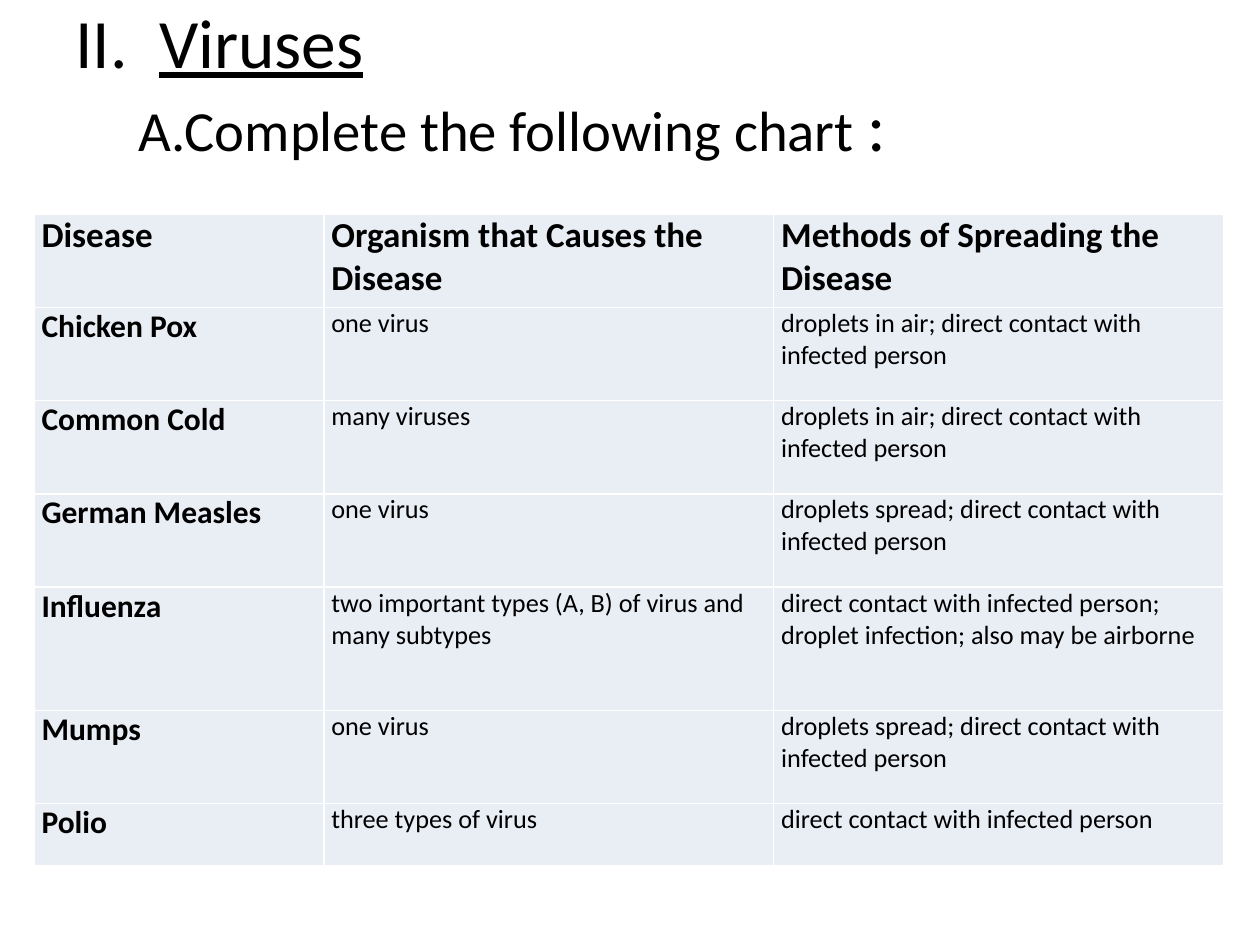
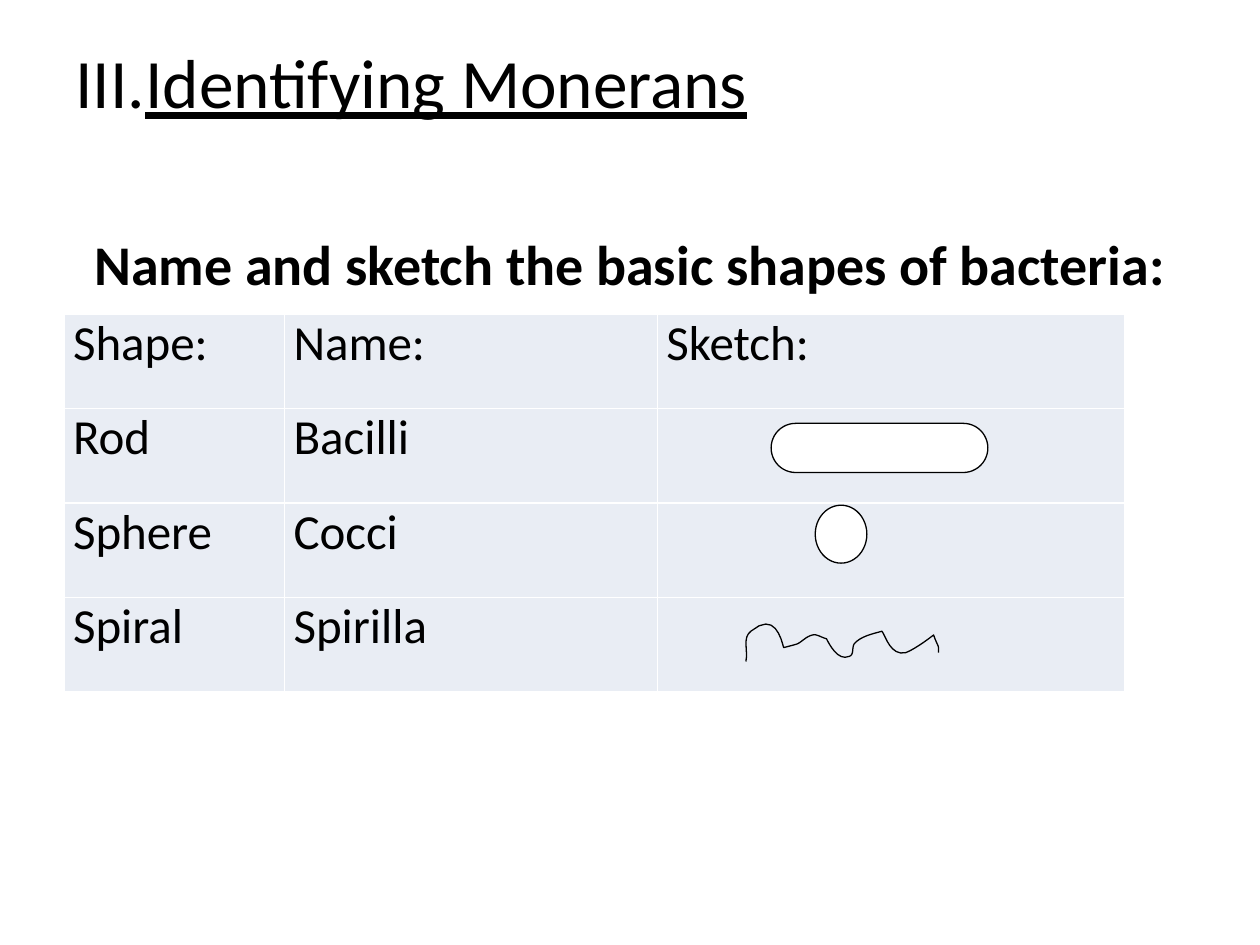
"""Build two worksheet slides on viral diseases and the shapes of bacteria."""
from pptx import Presentation
from pptx.dml.color import RGBColor
from pptx.enum.shapes import MSO_SHAPE
from pptx.enum.text import MSO_ANCHOR
from pptx.util import Inches, Pt

BOTTOM, TOP = MSO_ANCHOR.BOTTOM, MSO_ANCHOR.TOP
PILL, OVAL = MSO_SHAPE.ROUNDED_RECTANGLE, MSO_SHAPE.OVAL
FONT = "Calibri"
BLACK, WHITE, CELL_FILL = "000000", "FFFFFF", "E9EDF4"
TITLE_AREA = (0.5, 0.3, 9, 1.25)
TITLE_SIZE, SUBTITLE_SIZE = 39.6, 32.4
color = RGBColor.from_string


def add_text(page, area, anchor, margins, lines, bold=False):
    box = page.shapes.add_textbox(*map(Inches, area))
    frame = box.text_frame
    frame.word_wrap = True
    frame.vertical_anchor = anchor
    frame.margin_left, frame.margin_top, frame.margin_bottom = map(Inches, margins)
    for index, line in enumerate(lines):
        para = frame.add_paragraph() if index else frame.paragraphs[0]
        para.font.name = FONT
        para.font.bold = bold
        para.font.color.rgb = color(BLACK)
        for text, size, underline in line:
            span = para.add_run()
            span.text = text
            span.font.size = Pt(size)
            span.font.underline = underline


def add_grid(page, left, top, widths, heights, rows, margin, style_of):
    table = page.shapes.add_table(
        len(rows), len(widths), Inches(left), Inches(top),
        Inches(sum(widths)), Inches(sum(heights))).table
    table.first_row = table.horz_banding = False
    for column, width in zip(table.columns, widths):
        column.width = Inches(width)
    for row_index, (row, height) in enumerate(zip(rows, heights)):
        table.rows[row_index].height = Inches(height)
        for column_index, text in enumerate(row):
            cell = table.cell(row_index, column_index)
            cell.fill.solid()
            cell.fill.fore_color.rgb = color(CELL_FILL)
            cell.margin_left = cell.margin_right = Inches(margin)
            cell.margin_top = cell.margin_bottom = 0
            para = cell.text_frame.paragraphs[0]
            para.text = text
            size, bold = style_of(row_index, column_index)
            para.font.name = FONT
            para.font.size = Pt(size)
            para.font.bold = bold
            para.font.color.rgb = color(BLACK)


deck = Presentation()
deck.slide_width, deck.slide_height = Inches(10), Inches(7.5)
blank = deck.slide_layouts[6]

page = deck.slides.add_slide(blank)
add_text(page, TITLE_AREA, BOTTOM, (0.1, 0.05, 0.24), [
    [("II.  ", TITLE_SIZE, False), ("Viruses", TITLE_SIZE, True)],
    [("\tA.Complete the following chart ", SUBTITLE_SIZE, False), (":", TITLE_SIZE, False)],
])
diseases = [
    ("Disease", "Organism that Causes the Disease", "Methods of Spreading the Disease"),
    ("Chicken Pox", "one virus", "droplets in air; direct contact with infected person"),
    ("Common Cold", "many viruses", "droplets in air; direct contact with infected person"),
    ("German Measles", "one virus", "droplets spread; direct contact with infected person"),
    ("Influenza", "two important types (A, B) of virus and many subtypes",
     "direct contact with infected person; droplet infection; also may be airborne"),
    ("Mumps", "one virus", "droplets spread; direct contact with infected person"),
    ("Polio", "three types of virus", "direct contact with infected person"),
]
add_grid(page, 0.27, 1.7, [2.3, 3.57, 3.57], [0.74] * 4 + [0.98, 0.74, 0.49], diseases, 0.06,
         lambda row, column: (20, True) if row == 0 else (15, False) if column else (18, True))

page = deck.slides.add_slide(blank)
add_text(page, TITLE_AREA, BOTTOM, (0.1, 0.05, 0.58), [
    [("III.", TITLE_SIZE, False), ("Identifying Monerans", TITLE_SIZE, True)],
])
add_text(page, (0.5, 1.75, 9, 4.95), TOP, (0.25, 0.07, 0.05),
         [[("Name and sketch the basic shapes of bacteria:", 32, False)]], bold=True)
bacteria = [
    ("Shape:", "Name:", "Sketch:"),
    ("Rod", "Bacilli", ""),
    ("Sphere", "Cocci", ""),
    ("Spiral", "Spirilla", ""),
]
add_grid(page, 0.51, 2.49, [1.75, 2.96, 3.71], [0.75] * 4, bacteria, 0.07,
         lambda row, column: (28, False))

rod = page.shapes.add_shape(PILL, Inches(6.12), Inches(3.36), Inches(1.72), Inches(0.39))
rod.adjustments[0] = 0.5
sphere = page.shapes.add_shape(OVAL, Inches(6.47), Inches(4.01), Inches(0.41), Inches(0.46))

spiral_start = (5.92, 5.25)
spiral_curves = [
    ((5.94, 5.17), (5.89, 5.06), (5.96, 5.01)),
    ((6.15, 4.85), (6.2, 5.07), (6.22, 5.14)),
    ((6.26, 5.13), (6.3, 5.12), (6.33, 5.11)),
    ((6.37, 5.09), (6.4, 5.05), (6.45, 5.04)),
    ((6.48, 5.03), (6.52, 5.06), (6.56, 5.07)),
    ((6.58, 5.11), (6.65, 5.25), (6.74, 5.21)),
    ((6.78, 5.2), (6.76, 5.14), (6.78, 5.11)),
    ((6.83, 5.05), (6.93, 5.03), (7, 5.01)),
    ((7.03, 5.05), (7.07, 5.21), (7.19, 5.18)),
    ((7.27, 5.15), (7.41, 5.04), (7.41, 5.04)),
    ((7.45, 5.15), (7.45, 5.11), (7.45, 5.18)),
]
STEPS = 8
points = []
start = spiral_start
for first, second, end in spiral_curves:
    for step in range(1, STEPS + 1):
        t = step / STEPS
        weights = ((1 - t) ** 3, 3 * t * (1 - t) ** 2, 3 * t ** 2 * (1 - t), t ** 3)
        corners = (start, first, second, end)
        points.append(tuple(
            Inches(sum(weight * corner[axis] for weight, corner in zip(weights, corners)))
            for axis in (0, 1)))
    start = end
builder = page.shapes.build_freeform(*map(Inches, spiral_start))
builder.add_line_segments(points, close=False)
spiral = builder.convert_to_shape()

for sketch in (rod, sphere, spiral):
    sketch.shadow.inherit = False
    sketch.line.color.rgb = color(BLACK)
    sketch.line.width = Pt(0.75)
for sketch in (rod, sphere):
    sketch.fill.solid()
    sketch.fill.fore_color.rgb = color(WHITE)
spiral.fill.background()

deck.save("out.pptx")
